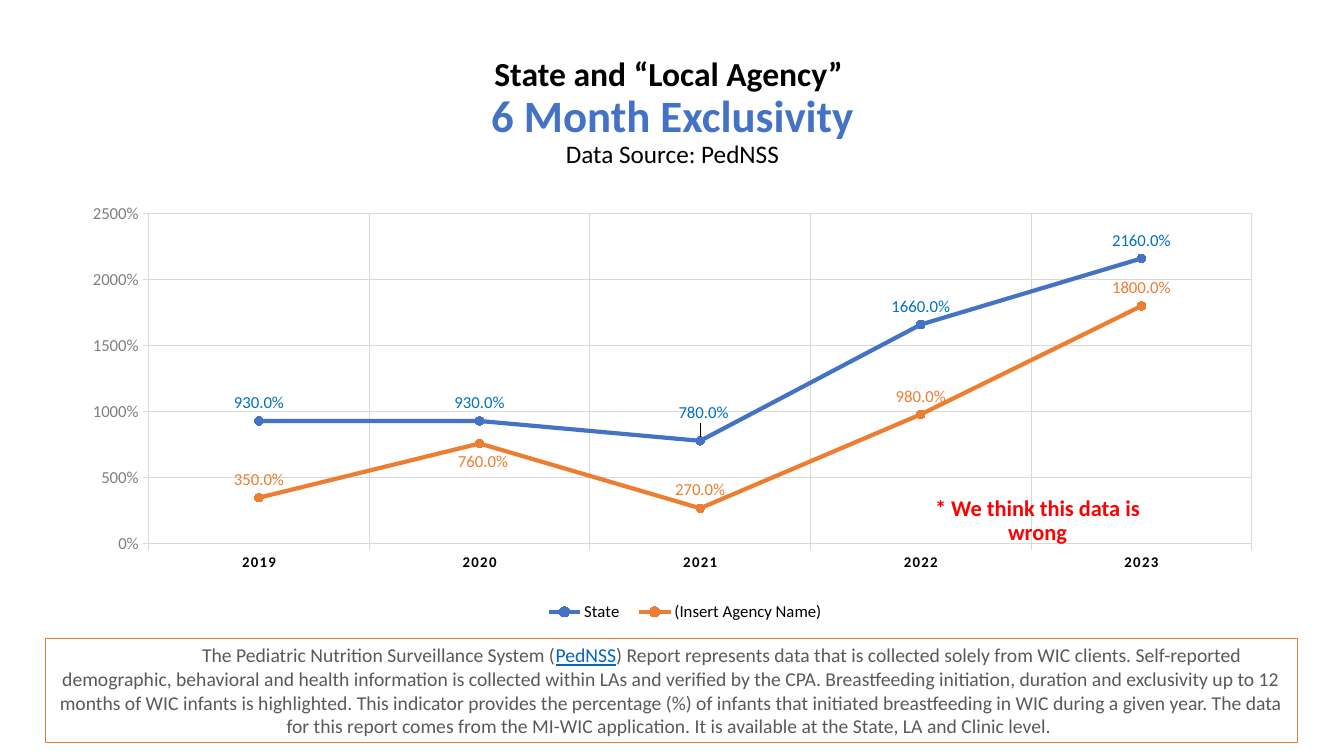
from lxml.etree import fromstring
from pptx import Presentation
from pptx.chart.data import CategoryChartData
from pptx.dml.color import RGBColor
from pptx.enum.chart import XL_CHART_TYPE as ChartType, XL_LABEL_POSITION as LabelPosition
from pptx.enum.chart import XL_LEGEND_POSITION as LegendPosition, XL_MARKER_STYLE as MarkerStyle
from pptx.enum.chart import XL_TICK_MARK as TickMark
from pptx.enum.shapes import MSO_SHAPE as ShapeType
from pptx.enum.text import MSO_ANCHOR as Anchor, MSO_AUTO_SIZE as AutoSize, PP_ALIGN as Align
from pptx.util import Inches, Pt

FONT = "Calibri"
BLUE, ORANGE, GREY, GRID = "4472C4", "ED7D31", "595959", "D9D9D9"
CHART_NAMESPACE = "http://schemas.openxmlformats.org/drawingml/2006/chart"
NO_LEADER_LINES = (
    f'<c:extLst xmlns:c="{CHART_NAMESPACE}"><c:ext uri="{{CE6537A1-D6FC-4f65-9D91-7224C49458BB}}" '
    'xmlns:c15="http://schemas.microsoft.com/office/drawing/2012/chart">'
    '<c15:showLeaderLines val="0"/></c:ext></c:extLst>')

TITLE_LINES = [
    ("State and “Local Agency” ", 24, "000000", True),
    ("6 Month Exclusivity", 32, BLUE, True),
    ("Data Source: PedNSS", 18, "000000", False),
]
YEARS = ["2019", "2020", "2021", "2022", "2023"]
SERIES = [
    {"name": "State", "values": (9.3, 9.3, 7.8, 16.6, 21.6), "color": BLUE,
     "label_color": "0070C0", "moved_label": (2, 0.003, -0.02)},
    {"name": "(Insert Agency Name)", "values": (3.5, 7.6, 2.7, 9.8, 18), "color": ORANGE,
     "label_color": ORANGE, "moved_label": (1, 0.003, 0.075)},
]
WARNING = "* We think this data is wrong"
DESCRIPTION = [
    ("\tThe Pediatric Nutrition Surveillance System (", GREY, False),
    ("PedNSS", "0563C1", True),
    (") Report represents data that is collected solely from WIC clients. Self-reported "
     "demographic, behavioral and health information is collected within LAs and verified by "
     "the CPA. Breastfeeding initiation, duration and exclusivity up to 12 months of WIC infants "
     "is highlighted. This indicator provides the percentage (%) of infants that initiated "
     "breastfeeding in WIC during a given year. The data for this report comes from the MI-WIC "
     "application. It is available at the State, LA and Clinic level. ", GREY, False),
]

TITLE_BOX = (0.92, 0.4, 11.5, 1.45)
CHART_BOX = (0.92, 1.65, 11.5, 4.78)
WARNING_BOX = (8.88, 4.95, 2.82, 0.44)
DESCRIPTION_BOX = (0.45, 6.33, 12.42, 1.04)
PLOT_SHARES = {"x": 0.046, "y": 0.098, "w": 0.954, "h": 0.686}
LEGEND_SHARES = {"x": 0.38, "y": 0.895, "w": 0.26, "h": 0.06}


def rgb(color):
    return RGBColor.from_string(color)


def box(lengths):
    return [Inches(length) for length in lengths]


def style_font(font, size, color, bold=False):
    font.name, font.size, font.bold = FONT, Pt(size), bold
    font.color.rgb = rgb(color)


def style_line(line, color, width):
    line.color.rgb = rgb(color)
    line.width = Pt(width)


def place(parent, index, shares, target="", fixed=True):
    for layout in parent.findall(f"{{{CHART_NAMESPACE}}}layout"):
        parent.remove(layout)
    modes = "".join(f'<c:{key}Mode val="edge"/>' for key in "xy") if fixed else ""
    sizes = "".join(f'<c:{key} val="{share}"/>' for key, share in shares.items())
    parent.insert(index, fromstring(
        f'<c:layout xmlns:c="{CHART_NAMESPACE}"><c:manualLayout>'
        f'{target}{modes}{sizes}</c:manualLayout></c:layout>'))


def prepare_text(frame, spacing):
    frame.word_wrap, frame.auto_size = True, AutoSize.NONE
    frame.vertical_anchor = Anchor.MIDDLE
    paragraph = frame.paragraphs[0]
    paragraph.alignment, paragraph.line_spacing = Align.CENTER, spacing
    return paragraph


def add_title(slide):
    title = slide.shapes.title
    title.left, title.top, title.width, title.height = box(TITLE_BOX)
    title.text_frame.paragraphs[0].text = "\v".join(line[0] for line in TITLE_LINES)
    paragraph = prepare_text(title.text_frame, 0.9)
    for run, (_, size, color, bold) in zip(paragraph.runs, TITLE_LINES):
        style_font(run.font, size, color, bold)


def style_axis(axis, size, color, bold=False):
    axis.has_major_gridlines = True
    axis.major_tick_mark = TickMark.OUTSIDE
    for line in (axis.format.line, axis.major_gridlines.format.line):
        style_line(line, GRID, 0.75)
    style_font(axis.tick_labels.font, size, color, bold)


def style_series(series, content):
    color = content["color"]
    series.smooth = False
    style_line(series.format.line, color, 3)
    series.marker.style, series.marker.size = MarkerStyle.CIRCLE, 6
    series.marker.format.fill.solid()
    series.marker.format.fill.fore_color.rgb = rgb(color)
    style_line(series.marker.format.line, color, 0.75)

    labels = series.data_labels
    labels.show_value, labels.position = True, LabelPosition.ABOVE
    labels.number_format, labels.number_format_is_linked = "0.0%", False
    style_font(labels.font, 12, content["label_color"])

    index, shift_x, shift_y = content["moved_label"]
    moved = series.points[index].data_label
    style_font(moved.font, 12, content["label_color"])
    moved.position = LabelPosition.ABOVE
    labels_element = labels._element
    place(labels_element.find(f"{{{CHART_NAMESPACE}}}dLbl"), 1,
          {"x": shift_x, "y": shift_y}, fixed=False)
    for leader in labels_element.findall(f"{{{CHART_NAMESPACE}}}showLeaderLines"):
        labels_element.remove(leader)
    labels_element.append(fromstring(NO_LEADER_LINES))


def add_chart(slide):
    data = CategoryChartData(number_format="0.0%")
    data.categories = YEARS
    for content in SERIES:
        data.add_series(content["name"], content["values"])
    chart = slide.shapes.add_chart(ChartType.LINE_MARKERS, *box(CHART_BOX), data).chart
    style_font(chart.font, 10, "7F7F7F")
    chart.has_title = False
    chart.has_legend = True
    chart.legend.position, chart.legend.include_in_layout = LegendPosition.BOTTOM, False
    style_font(chart.legend.font, 12, "000000")
    place(chart.legend._element, 1, LEGEND_SHARES)

    style_axis(chart.category_axis, 10.6, "000000", True)
    chart.category_axis.tick_labels.font._element.set("spc", "100")
    values = chart.value_axis
    style_axis(values, 12, "7F7F7F")
    values.minimum_scale, values.maximum_scale, values.major_unit = 0, 25, 5
    values.tick_labels.number_format = "0%"
    values.tick_labels.number_format_is_linked = False

    plot = chart.plots[0]
    plot.vary_by_categories = False
    for series, content in zip(plot.series, SERIES):
        style_series(series, content)
    place(plot._element.getparent(), 0, PLOT_SHARES, '<c:layoutTarget val="inner"/>')


def add_description(slide):
    panel = slide.shapes.add_shape(ShapeType.RECTANGLE, *box(DESCRIPTION_BOX))
    panel.shadow.inherit = False
    panel.fill.background()
    style_line(panel.line, ORANGE, 0.75)
    paragraph = prepare_text(panel.text_frame, 1.0)
    paragraph._p.get_or_add_pPr().set("defTabSz", str(Inches(1)))
    for text, color, underlined in DESCRIPTION:
        run = paragraph.add_run()
        run.text = text
        style_font(run.font, 14, color)
        run.font.underline = underlined


def add_warning(slide):
    frame = slide.shapes.add_textbox(*box(WARNING_BOX)).text_frame
    frame.text = WARNING
    paragraph = prepare_text(frame, 0.9)
    style_font(paragraph.runs[0].font, 16, "FF0000", True)


def main():
    """Build the six month exclusivity slide."""
    presentation = Presentation()
    presentation.slide_width, presentation.slide_height = box((13.33, 7.5))
    slide = presentation.slides.add_slide(presentation.slide_layouts[5])
    add_title(slide)
    add_chart(slide)
    add_description(slide)
    add_warning(slide)
    presentation.save("out.pptx")


if __name__ == "__main__":
    main()
